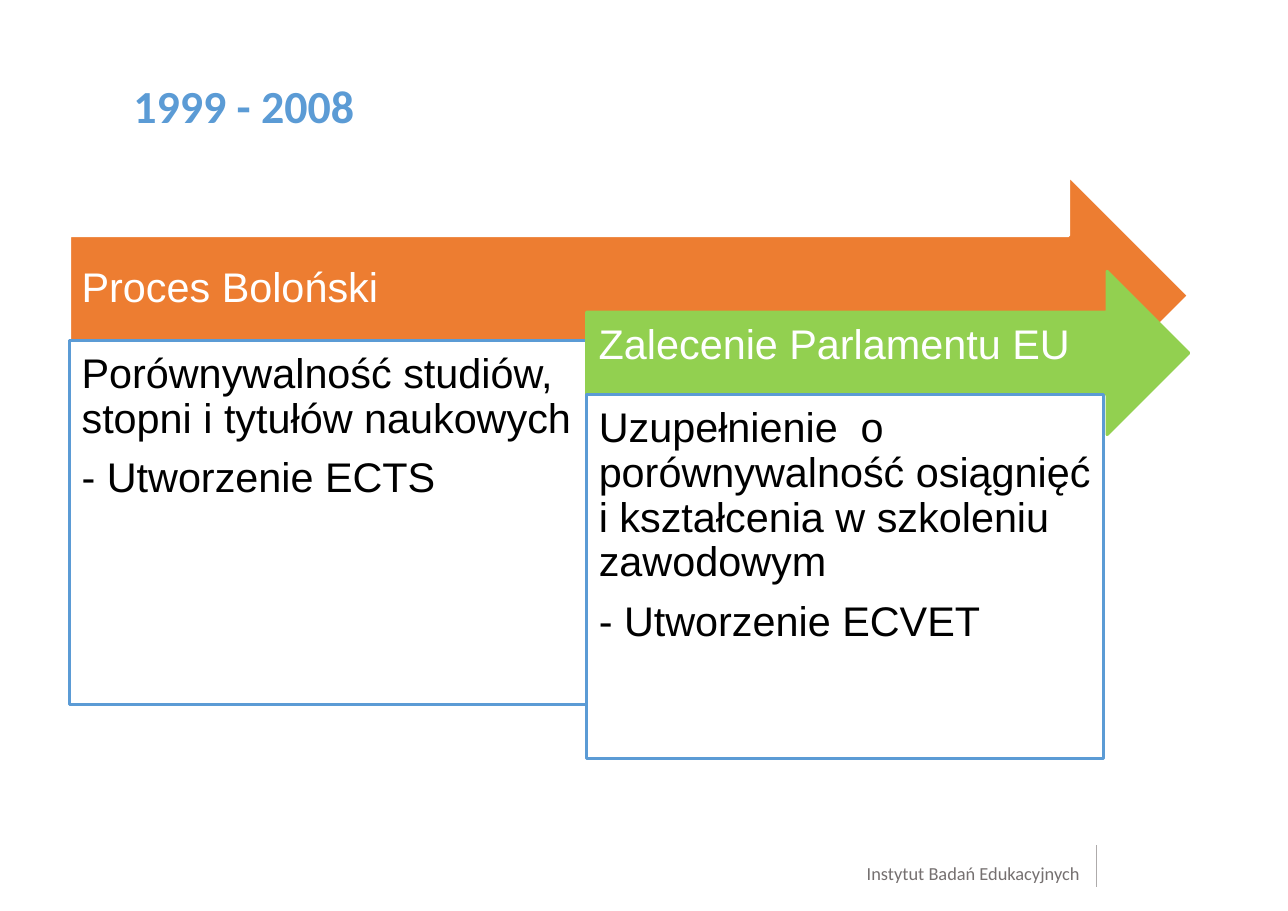
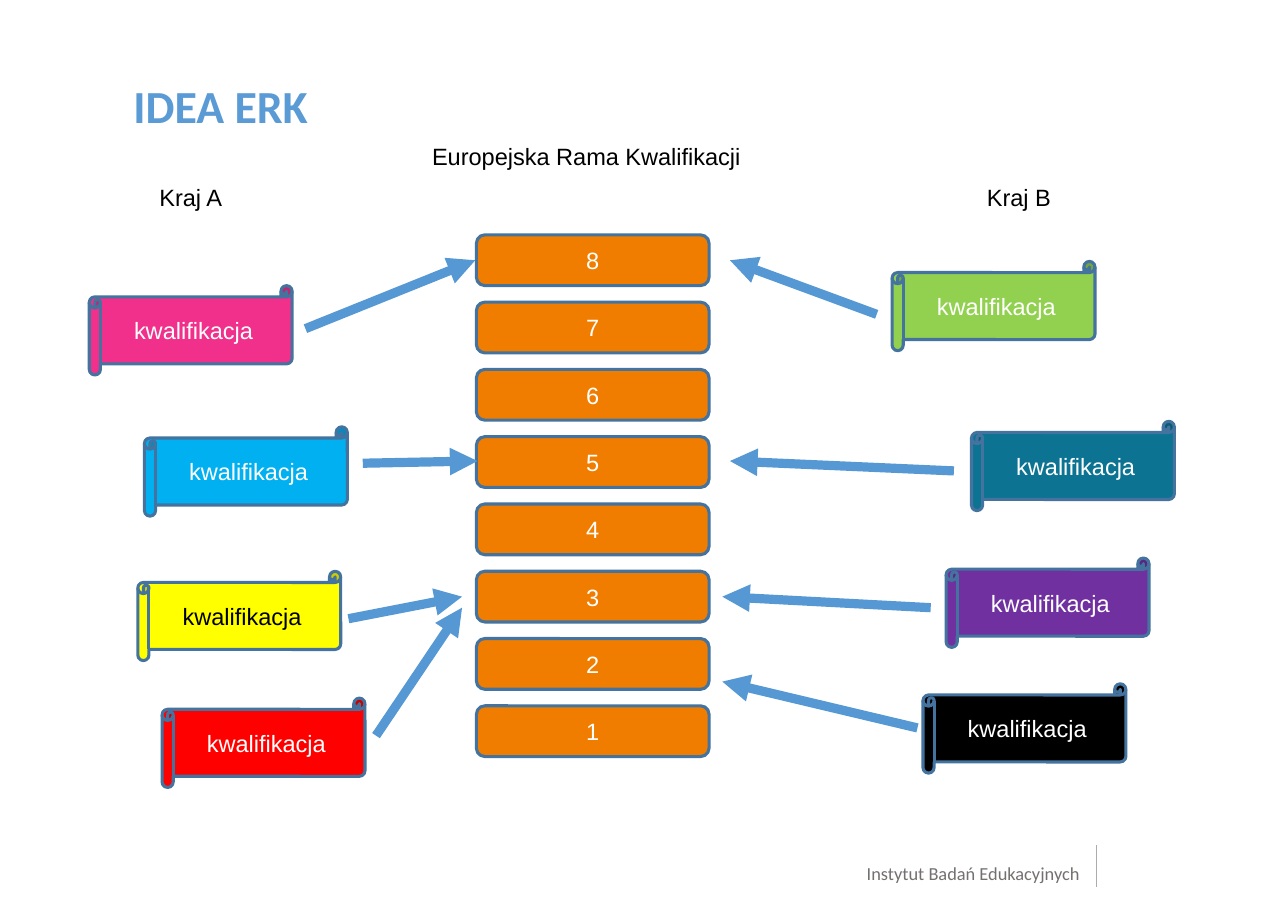
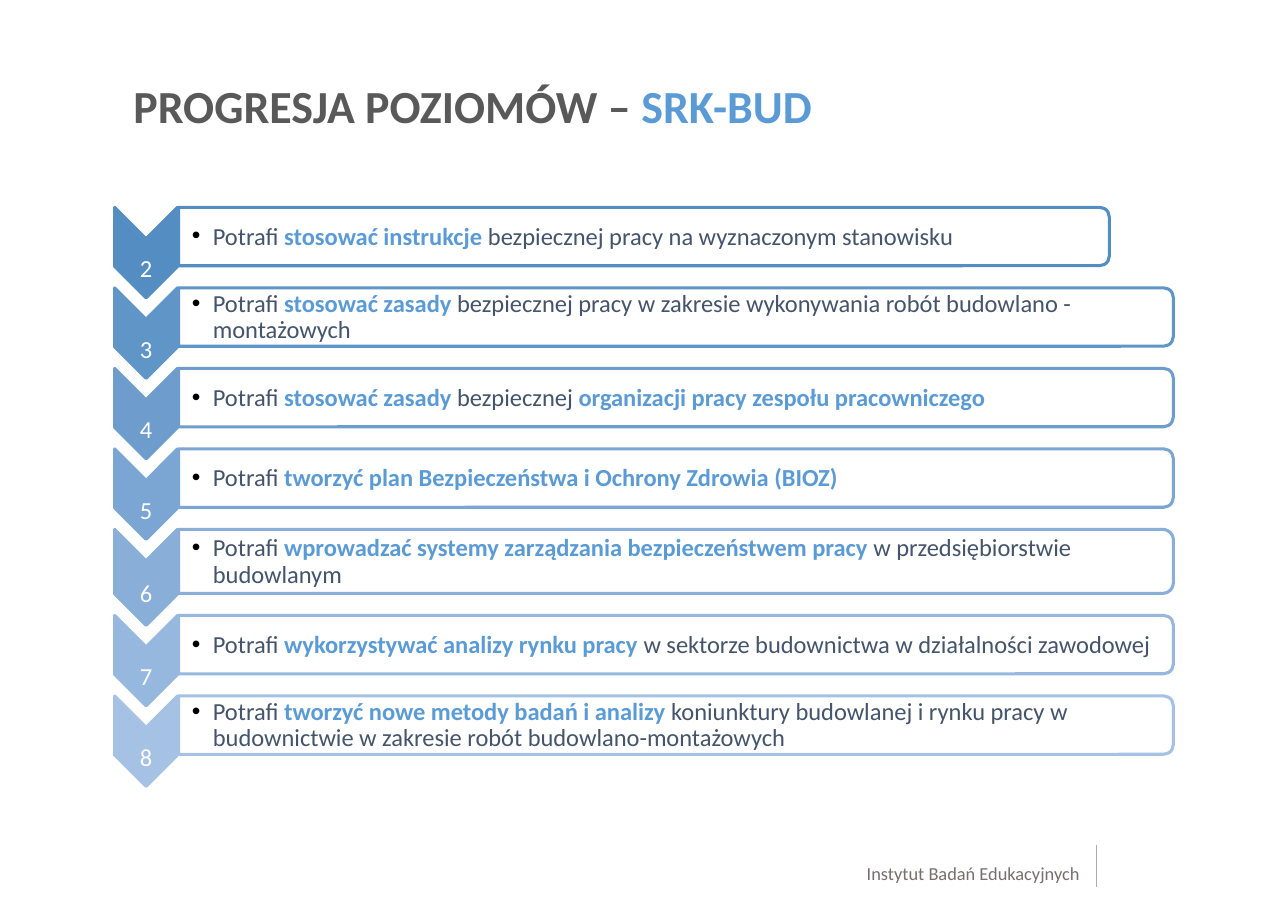
from lxml.etree import SubElement
from pptx import Presentation
from pptx.dml.color import RGBColor
from pptx.enum.shapes import MSO_CONNECTOR, MSO_SHAPE as Shape
from pptx.enum.text import MSO_ANCHOR as Anchor, PP_ALIGN as Align
from pptx.oxml.ns import qn
from pptx.util import Inches, Pt

BLUE, WHITE, BLACK = "5B9BD5", "FFFFFF", "000000"
GRAY, NAVY, OUTLINE, ARROW = "595959", "44546A", "43739E", "5698D3"
DEFAULT_INSETS = (0.1, 0.05, 0.1, 0.05)
NO_INSETS = (0, 0, 0, 0)


def color(value):
    return RGBColor.from_string(value)


class Deck:
    """Hold the shared style and the current slide."""

    def __init__(self):
        self.presentation = Presentation()
        self.presentation.slide_width = Inches(11.68)
        self.presentation.slide_height = Inches(8.26)

    def start_slide(self, title):
        layout = self.presentation.slide_layouts[6]
        self.slide = self.presentation.slides.add_slide(layout)
        self.text((7.86, 7.82, 1.95, 0.21), ["Instytut Badań Edukacyjnych"],
                  size=12, font="Calibri", ink="757070", insets=NO_INSETS, wrap=False)
        self.line((9.94, 8.04), (9.94, 7.66), "AEABAB", 0.75)
        self.text((1.21, 0.76, 10.07, 0.85), [title], size=30, font="Calibri",
                  ink=BLUE, bold=True, insets=NO_INSETS, spacing=0.9)

    def set_text(self, shape, paragraphs, size=15.4, font="Arial", ink=BLACK, bold=False,
                 align=Align.LEFT, anchor=Anchor.TOP, insets=DEFAULT_INSETS, spacing=1.0,
                 after=0, bullet=False, wrap=True):
        frame = shape.text_frame
        frame.word_wrap = wrap
        frame.vertical_anchor = anchor
        (frame.margin_left, frame.margin_top,
         frame.margin_right, frame.margin_bottom) = [Inches(inset) for inset in insets]
        for index, content in enumerate(paragraphs):
            paragraph = frame.add_paragraph() if index else frame.paragraphs[0]
            paragraph.alignment = align
            paragraph.line_spacing = spacing
            paragraph.space_after = Pt(after)
            if bullet:
                self.bullet(paragraph)
            paragraph.font.size = Pt(size)
            paragraph.font.name = font
            if isinstance(content, str):
                paragraph.add_run().text = content
                paragraph.font.color.rgb = color(ink)
                paragraph.font.bold = bold
                continue
            for words, run_ink, run_bold in content:
                run = paragraph.add_run()
                run.text = words
                run.font.color.rgb = color(run_ink)
                run.font.bold = run_bold

    def bullet(self, paragraph):
        properties = paragraph._p.get_or_add_pPr()
        properties.set("marL", str(Inches(0.19)))
        properties.set("indent", str(Inches(-0.19)))
        bullet_color = SubElement(properties, qn("a:buClr"))
        SubElement(bullet_color, qn("a:srgbClr"), val=BLACK)
        SubElement(properties, qn("a:buFont"), typeface="Arial")
        SubElement(properties, qn("a:buChar"), char="•")

    def text(self, box, paragraphs, **style):
        shape = self.slide.shapes.add_textbox(*[Inches(length) for length in box])
        self.set_text(shape, paragraphs, **style)

    def shape(self, kind, box, fill, outline, paragraphs=(), rotation=0, **style):
        shape = self.slide.shapes.add_shape(kind, *[Inches(length) for length in box])
        shape.shadow.inherit = False
        shape.fill.solid()
        shape.fill.fore_color.rgb = color(fill)
        shape.line.color.rgb = color(outline)
        shape.line.width = Pt(2)
        shape.rotation = rotation
        if paragraphs:
            self.set_text(shape, paragraphs, **style)

    def label(self, kind, box, fill, words, ink=WHITE):
        self.shape(kind, box, fill, OUTLINE, [words], ink=ink,
                   align=Align.CENTER, anchor=Anchor.MIDDLE)

    def turned(self, kind, box, fill, outline):
        left, top, width, height = box
        self.shape(kind, (left + (width - height) / 2, top + (height - width) / 2,
                          height, width), fill, outline, rotation=90)

    def line(self, start, end, ink, width, arrow=False):
        points = [Inches(length) for length in (*start, *end)]
        connector = self.slide.shapes.add_connector(MSO_CONNECTOR.STRAIGHT, *points)
        connector.line.color.rgb = color(ink)
        connector.line.width = Pt(width)
        properties = connector._element.spPr
        if arrow:
            SubElement(properties.find(qn("a:ln")), qn("a:tailEnd"), type="triangle")
        SubElement(properties, qn("a:effectLst"))


def build_timeline(deck):
    deck.start_slide("1999 - 2008")
    stages = [
        ((0.63, 1.59, 10.15, 2.18), "ED7D31", WHITE, "Proces Boloński", 3.09,
         ["Porównywalność studiów, stopni i tytułów naukowych", "- Utworzenie ECTS"]),
        ((5.32, 2.46, 5.46, 1.48), "92D050", "92D050", "Zalecenie Parlamentu EU", 3.58,
         ["Uzupełnienie  o porównywalność osiągnięć i kształcenia w szkoleniu zawodowym",
          "- Utworzenie ECVET"]),
    ]
    for arrow_box, fill, outline, heading, top, details in stages:
        deck.shape(Shape.RIGHT_ARROW, arrow_box, fill, outline, [heading], size=27,
                   ink=WHITE, anchor=Anchor.MIDDLE, insets=(0.11, 0.11, 0.11, 0.23),
                   spacing=0.9)
        deck.shape(Shape.RECTANGLE, (arrow_box[0], top, 4.69, 3.3), WHITE, BLUE, details,
                   size=27, insets=(0.11,) * 4, spacing=0.9, after=9.45)


def build_framework(deck):
    deck.start_slide("IDEA ERK")
    for row, level in enumerate(range(8, 0, -1)):
        deck.label(Shape.ROUNDED_RECTANGLE, (4.32, 2.13 + 0.61 * row, 2.11, 0.46),
                   "F07D00", str(level))
    qualifications = [
        (8.09, 2.37, "92D050", WHITE), (8.81, 3.82, "0C7492", WHITE),
        (8.58, 5.06, "7030A0", WHITE), (8.37, 6.2, BLACK, WHITE),
        (0.81, 2.59, "F0308B", WHITE), (1.31, 3.87, "00B0F0", WHITE),
        (1.25, 5.18, "FFFF00", BLACK), (1.47, 6.33, "FF0000", WHITE),
    ]
    for left, top, fill, ink in qualifications:
        deck.label(Shape.HORIZONTAL_SCROLL, (left, top, 1.84, 0.81), fill,
                   "kwalifikacja", ink)
    deck.text((0.69, 1.61, 2.08, 0.36), ["Kraj A"], align=Align.CENTER)
    deck.text((8.32, 1.61, 1.84, 0.36), ["Kraj B"], align=Align.CENTER)
    deck.text((3.82, 1.24, 3.86, 0.36), ["Europejska Rama Kwalifikacji"])
    arrows = [
        ((2.77, 2.98), (4.31, 2.36)), ((7.95, 2.85), (6.62, 2.36)),
        ((3.29, 4.2), (4.33, 4.18)), ((8.65, 4.27), (6.62, 4.18)),
        ((3.16, 5.61), (4.19, 5.41)), ((8.44, 5.51), (6.55, 5.41)),
        ((3.41, 6.67), (4.19, 5.51)), ((8.32, 6.6), (6.55, 6.18)),
    ]
    for start, end in arrows:
        deck.line(start, end, ARROW, 6, arrow=True)


def build_progression(deck):
    deck.start_slide([("PROGRESJA POZIOMÓW – ", GRAY, True), ("SRK-BUD", BLUE, True)])
    levels = [
        ("538DC1", 8.44, 0.53, ["stosować instrukcje ",
                                "bezpiecznej pracy na wyznaczonym stanowisku"]),
        ("6095C7", 9.02, 0.53, ["stosować zasady ", "bezpiecznej pracy w zakresie "
                                "wykonywania robót budowlano - montażowych"]),
        ("6E9DCD", 9.02, 0.53, ["stosować zasady ", "bezpiecznej ",
                                "organizacji pracy zespołu pracowniczego"]),
        ("7BA6D3", 9.02, 0.53, ["tworzyć plan Bezpieczeństwa i Ochrony Zdrowia (BIOZ)"]),
        ("89AFD8", 9.02, 0.58, ["wprowadzać systemy zarządzania bezpieczeństwem pracy ",
                                "w przedsiębiorstwie budowlanym"]),
        ("97B8DE", 9.02, 0.53, ["wykorzystywać analizy rynku pracy ",
                                "w sektorze budownictwa w działalności zawodowej"]),
        ("A5C1E3", 9.02, 0.53, ["tworzyć nowe metody badań i analizy ",
                                "koniunktury budowlanej i rynku pracy w budownictwie "
                                "w zakresie robót budowlano-montażowych"]),
    ]
    top = 1.88
    for number, (tint, width, height, phrases) in enumerate(levels, start=2):
        deck.turned(Shape.CHEVRON, (1.04, top, 0.57, height + 0.29), tint, tint)
        deck.text((1.04, top + 0.29, 0.57, height - 0.28), [str(number)], size=16,
                  font="Calibri", ink=WHITE, align=Align.CENTER, anchor=Anchor.MIDDLE,
                  insets=(0.01,) * 4, spacing=2.0)
        deck.turned(Shape.ROUND_2_SAME_RECTANGLE, (1.62, top, width, height), WHITE, tint)
        runs = [(phrase, NAVY if index % 2 == 0 else BLUE, index % 2 == 1)
                for index, phrase in enumerate(["Potrafi ", *phrases])]
        deck.text((1.62, top + 0.03, width - 0.03, height - 0.05), [runs], size=16,
                  font="Calibri", anchor=Anchor.MIDDLE, insets=(0.12, 0.01, 0.01, 0.01),
                  spacing=0.9, bullet=True)
        top += height + 0.2


def main():
    deck = Deck()
    build_timeline(deck)
    build_framework(deck)
    build_progression(deck)
    deck.presentation.save("out.pptx")


if __name__ == "__main__":
    main()
